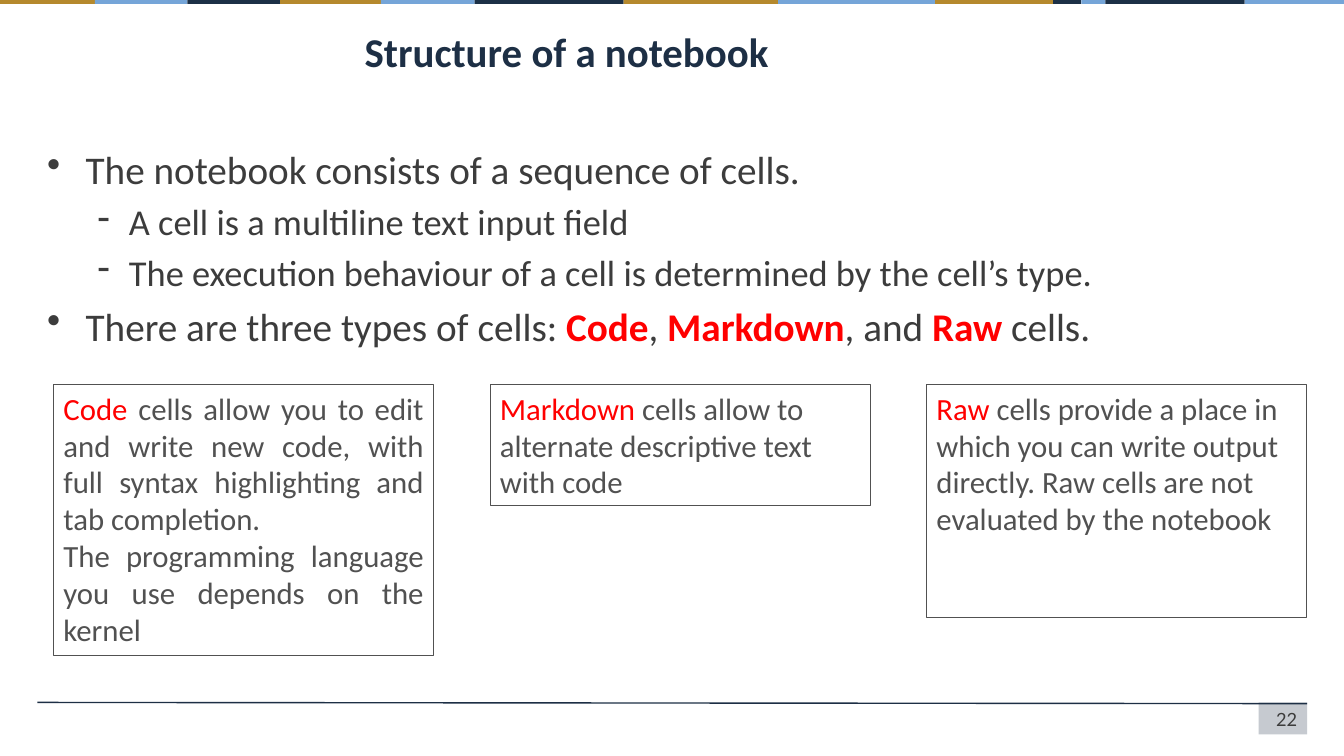
from lxml import etree
from pptx import Presentation
from pptx import util as u
from pptx.dml.color import RGBColor
from pptx.enum import shapes, text
from pptx.oxml import ns

COLORS = {
    "navy": "1D2F45", "strip_navy": "1C3046", "gold": "B5892D", "blue": "75A5D8",
    "body": "3C3C3C", "box": "515151", "red": "FF0000",
}
ALIGN = text.PP_ALIGN

STRIP = [  # left edge in cm, colour
    (0, "gold"), (2.39, "blue"), (4.72, "strip_navy"), (7.06, "gold"),
    (9.6, "blue"), (11.96, "strip_navy"), (15.72, "gold"), (19.61, "blue"),
    (23.57, "gold"), (26.54, "strip_navy"), (27.25, "blue"),
    (27.86, "strip_navy"), (31.37, "blue"),
]

# Runs are (text, highlighted)
BULLETS = [  # level, runs
    (0, [("The notebook consists of a sequence of cells.", False)]),
    (1, [("A cell is a multiline text input field", False)]),
    (1, [("The execution behaviour of a cell is determined by the cell’s type.", False)]),
    (0, [("There are three types of cells: ", False), ("Code", True), (", ", False),
         ("Markdown", True), (", and ", False), ("Raw", True), (" cells.", False)]),
]
LEVELS = [  # bullet, size, left margin, hanging indent, space before
    ("•", 28, 0.97, 0.97, 5.6),
    ("-", 26, 2.06, 0.79, 5.2),
]

CELL_TYPES = [  # height in cm, alignment, paragraphs
    (6.83, ALIGN.JUSTIFY, [
        [("Code", True), (" cells allow you to edit and write new code, with full "
                          "syntax highlighting and tab completion. ", False)],
        [("The programming language you use depends on the kernel", False)]]),
    (3.07, ALIGN.LEFT, [
        [("Markdown", True),
         (" cells allow to alternate descriptive text with code", False)]]),
    (5.89, ALIGN.LEFT, [
        [("Raw ", True), ("cells provide a place in which you can write output directly. "
                          "Raw cells are not evaluated by the notebook", False)]]),
]


def rgb(name):
    return RGBColor.from_string(COLORS[name])


def add_run(p, words, color, **formats):
    r = p.add_run()
    r.text = words
    r.font.color.rgb = rgb(color)
    for name, value in formats.items():
        setattr(r.font, name, value)


def setup_frame(tf, anchor=text.MSO_ANCHOR.TOP):
    formats = {
        "word_wrap": True, "auto_size": text.MSO_AUTO_SIZE.NONE, "vertical_anchor": anchor,
        "margin_left": u.Cm(0.25), "margin_right": u.Cm(0.25),
        "margin_top": u.Cm(0.13), "margin_bottom": u.Cm(0.13),
    }
    for name, value in formats.items():
        setattr(tf, name, value)
    return tf


def next_paragraph(tf, index):
    return tf.add_paragraph() if index else tf.paragraphs[0]


def add_rect(s, left, top, width, height, fill=None):
    sp = s.shapes.add_shape(shapes.MSO_SHAPE.RECTANGLE, *map(u.Cm, (left, top, width, height)))
    sp.shadow.inherit = False
    if fill:
        sp.fill.solid()
        sp.fill.fore_color.rgb = rgb(fill)
        sp.line.fill.background()
    else:
        sp.fill.background()
    return sp


def add_strip(s, left, top, width, height):
    ends = [x for x, _ in STRIP[1:]] + [width]
    for (x, color), end in zip(STRIP, ends):
        add_rect(s, left + x, top, end - x, height, color)


def add_footer(s, left, top, width, height):
    # Tinted block behind the page number
    right = left + width
    block = add_rect(s, right - 1.22, top, 1.22, height, "navy")
    color = block.fill._xPr.find(".//" + ns.qn("a:srgbClr"))
    etree.SubElement(color, ns.qn("a:alpha"), val="25000")
    # Rule
    rule = s.shapes.add_connector(shapes.MSO_CONNECTOR.STRAIGHT, u.Cm(right), u.Cm(top + 0.03),
                                  u.Cm(left), u.Cm(top))
    rule.line.color.rgb = rgb("navy")
    rule.line.width = u.Pt(1)
    etree.SubElement(rule._element.spPr, ns.qn("a:effectLst"))
    # Page number
    sp = s.shapes.add_textbox(u.Cm(right - 8.66), u.Cm(top + 0.03), u.Cm(8.66), u.Cm(0.79))
    p = setup_frame(sp.text_frame, text.MSO_ANCHOR.MIDDLE).paragraphs[0]
    p.alignment = ALIGN.RIGHT
    add_run(p, "22", "body", name="Lato", size=u.Pt(13))


def add_title(s, left, top, width, height):
    sp = s.shapes.title
    sp.left, sp.top, sp.width, sp.height = map(u.Cm, (left, top, width, height))
    p = setup_frame(sp.text_frame, text.MSO_ANCHOR.MIDDLE).paragraphs[0]
    p.alignment = ALIGN.LEFT
    add_run(p, "Structure of a notebook", "navy", name="Calibri", size=u.Pt(29.2), bold=True)


def add_bullets(s, left, top, width, height):
    sp = s.shapes.add_textbox(*map(u.Cm, (left, top, width, height)))
    tf = setup_frame(sp.text_frame)
    for i, (level, runs) in enumerate(BULLETS):
        char, size, margin, hang, before = LEVELS[level]
        p = next_paragraph(tf, i)
        p.level = level
        pPr = p._p.get_or_add_pPr()
        pPr.set("marL", str(u.Cm(margin)))
        pPr.set("indent", str(-u.Cm(hang)))
        bullet_color = etree.SubElement(pPr, ns.qn("a:buClr"))
        etree.SubElement(bullet_color, ns.qn("a:srgbClr"), val=COLORS["body"])
        etree.SubElement(pPr, ns.qn("a:buChar"), char=char)
        if i:
            p.space_before = u.Pt(before)
        for words, marked in runs:
            add_run(p, words, "red" if marked else "body",
                    name="Calibri", size=u.Pt(size), bold=marked)


def add_cell_types(s, left, top, width, gap):
    box_width = (width - gap * (len(CELL_TYPES) - 1)) / len(CELL_TYPES)
    for i, (height, align, paragraphs) in enumerate(CELL_TYPES):
        sp = add_rect(s, left + i * (box_width + gap), top, box_width, height)
        sp.line.color.rgb = rgb("box")
        sp.line.width = u.Pt(0.75)
        tf = setup_frame(sp.text_frame)
        for j, runs in enumerate(paragraphs):
            p = next_paragraph(tf, j)
            p.alignment = align
            for words, marked in runs:
                add_run(p, words, "red" if marked else "box", name="Calibri", size=u.Pt(22))


def main():
    prs = Presentation()
    prs.slide_width, prs.slide_height = u.Cm(33.87), u.Cm(19.05)
    s = prs.slides.add_slide(prs.slide_layouts[5])
    add_strip(s, 0, 0, 33.87, 0.1)
    add_footer(s, 0.94, 17.7, 32, 0.81)
    add_title(s, 8.94, 0.53, 24, 1.5)
    add_bullets(s, 0.94, 3.53, 32, 5.6)
    add_cell_types(s, 1.35, 9.68, 31.58, 1.42)
    prs.save("out.pptx")


if __name__ == "__main__":
    main()
